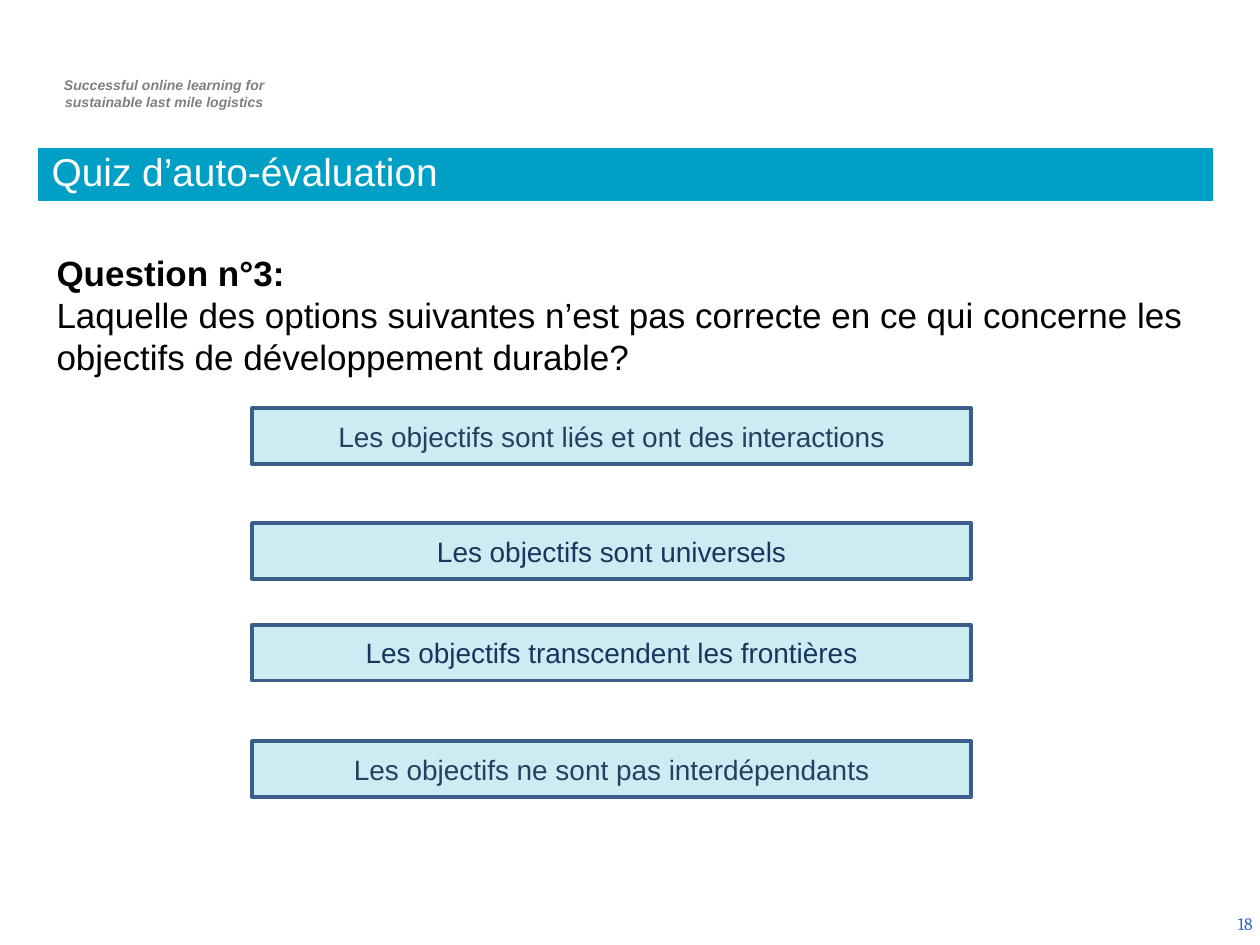
from lxml import etree
from pptx import Presentation
from pptx.dml.color import RGBColor
from pptx.enum import shapes, text
from pptx.oxml.ns import qn
from pptx.util import Pt

TITLE = "Quiz d’auto-évaluation"
TAGLINE = ["Successful online learning for", "sustainable last mile logistics"]
QUESTION = [
    ("Question n°3:", True),
    ("Laquelle des options suivantes n’est pas correcte en ce qui concerne "
     "les objectifs de développement durable?", False),
]
PAGE_NUMBER = "18"
ANSWERS = [
    ("Les objectifs sont liés et ont des interactions", 233.3, "244061"),
    ("Les objectifs sont universels", 298.8, "17365D"),
    ("Les objectifs transcendent les frontières", 357, "17365D"),
    ("Les objectifs ne sont pas interdépendants", 423.4, "244061"),
]
ANSWER_LEFT, ANSWER_WIDTH, ANSWER_HEIGHT = 144, 411, 32
ANSWER_OPACITY = 20
ACCENT, OUTLINE = "009FC6", "395E89"


def colour(value):
    return RGBColor.from_string(value)


def points(*values):
    return [Pt(value) for value in values]


def paint(shape, fill, line, width):
    shape.fill.solid()
    shape.fill.fore_color.rgb = colour(fill)
    shape.line.color.rgb = colour(line)
    shape.line.width = Pt(width)


def write(shape, lines, size, tint, align=text.PP_ALIGN.LEFT,
          anchor=text.MSO_ANCHOR.TOP, name="Arial"):
    frame = shape.text_frame
    frame.word_wrap = True
    frame.auto_size = text.MSO_AUTO_SIZE.NONE
    frame.vertical_anchor = anchor
    frame.text = "\n".join(lines)
    for para in frame.paragraphs:
        para.alignment = align
        para.font.name = name
        para.font.size = Pt(size)
        para.font.color.rgb = colour(tint)
    return frame.paragraphs


def add_answer(page, label, top, tint):
    box = page.shapes.add_shape(
        shapes.MSO_SHAPE.RECTANGLE,
        *points(ANSWER_LEFT, top, ANSWER_WIDTH, ANSWER_HEIGHT))
    box.shadow.inherit = False
    paint(box, ACCENT, OUTLINE, 2)
    fill = box._element.spPr.find(qn("a:solidFill"))
    etree.SubElement(fill[0], qn("a:alpha"), val=str(ANSWER_OPACITY * 1000))
    write(box, [label], 16, tint, text.PP_ALIGN.CENTER, text.MSO_ANCHOR.MIDDLE)


def main():
    deck = Presentation()
    deck.slide_width, deck.slide_height = points(720, 540)
    page = deck.slides.add_slide(deck.slide_layouts[5])

    title = page.shapes.title
    title.left, title.top, title.width, title.height = points(22.3, 85, 670.5, 29.5)
    paint(title, ACCENT, ACCENT, 0.75)
    heading = write(title, [TITLE], 22.2, "FFFFFF", anchor=text.MSO_ANCHOR.BOTTOM)[0]
    heading.line_spacing = 0.8

    tagline = page.shapes.add_textbox(*points(20.9, 40.3, 146.2, 26.6))
    for para in write(tagline, TAGLINE, 8, "7F7F7F", text.PP_ALIGN.CENTER):
        para.font.bold = para.font.italic = True

    question = page.shapes.add_textbox(*points(25.2, 140.4, 670.3, 104.4))
    lines = [line for line, bold in QUESTION]
    for para, (line, bold) in zip(write(question, lines, 20, "000000"), QUESTION):
        para.font.bold = bold

    for answer in ANSWERS:
        add_answer(page, *answer)

    number = page.shapes.add_textbox(*points(555.1, 513.4, 167.8, 28.8))
    write(number, [PAGE_NUMBER], 10, "3366CC", text.PP_ALIGN.RIGHT,
          text.MSO_ANCHOR.MIDDLE, "Cambria")

    deck.save("out.pptx")


if __name__ == "__main__":
    main()
